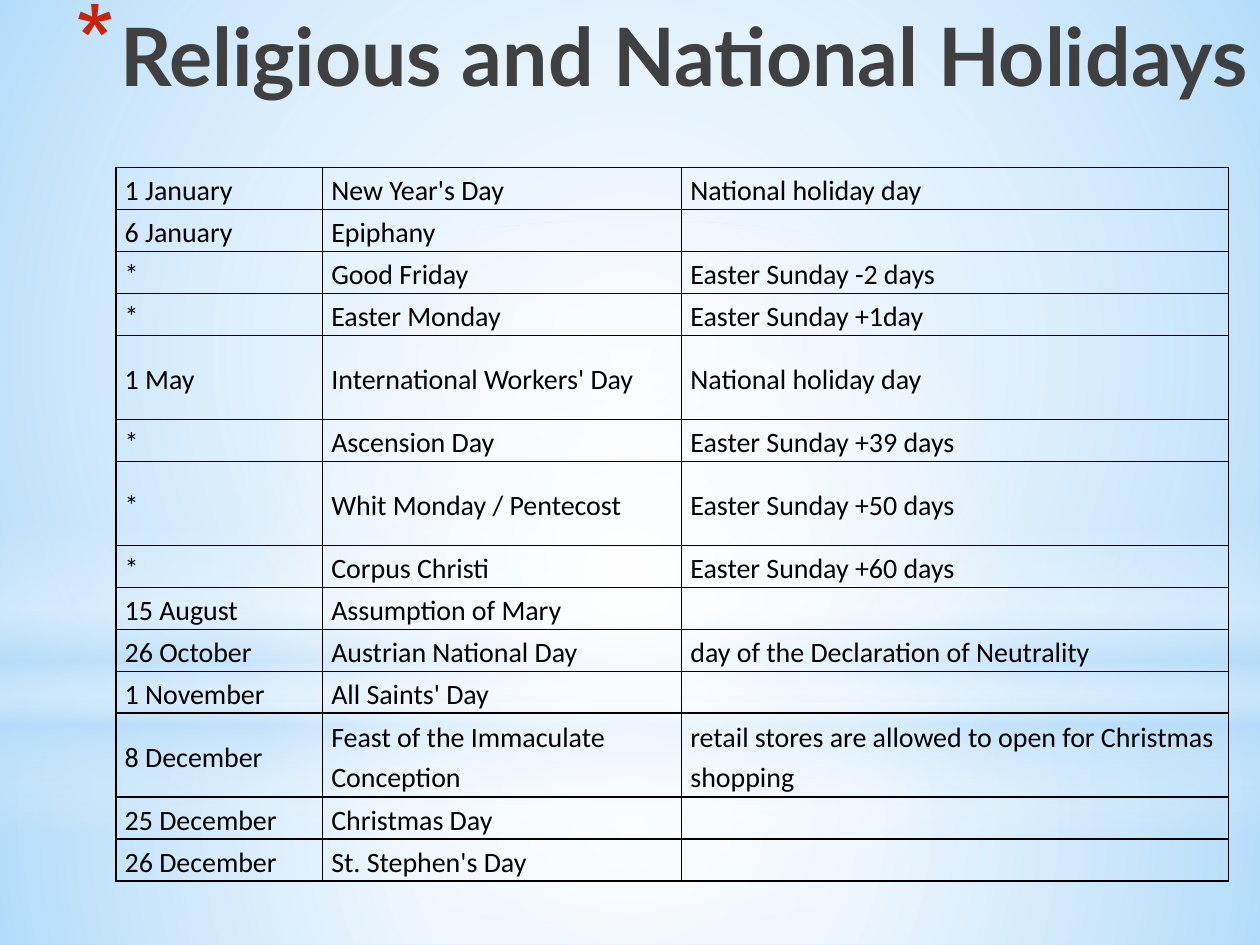
import lxml.etree
import pptx
import pptx.dml.color
import pptx.enum.shapes
import pptx.enum.text
import pptx.oxml
import pptx.oxml.ns
import pptx.util

# Content
TITLE = "Religious and National Holidays"
HOLIDAYS = [
    ("1 January", "New Year's Day", "National holiday day"),
    ("6 January", "Epiphany", ""),
    ("*", "Good Friday", "Easter Sunday -2 days"),
    ("*", "Easter Monday", "Easter Sunday +1day"),
    ("1 May", "International Workers' Day", "National holiday day"),
    ("*", "Ascension Day", "Easter Sunday +39 days"),
    ("*", "Whit Monday / Pentecost", "Easter Sunday +50 days"),
    ("*", "Corpus Christi", "Easter Sunday +60 days"),
    ("15 August", "Assumption of Mary", ""),
    ("26 October", "Austrian National Day", "day of the Declaration of Neutrality"),
    ("1 November", "All Saints' Day", ""),
    ("8 December", "Feast of the Immaculate Conception",
     "retail stores are allowed to open for Christmas shopping"),
    ("25 December", "Christmas Day", ""),
    ("26 December", "St. Stephen's Day", ""),
]
DOUBLE_ROWS = {"International Workers' Day", "Whit Monday / Pentecost",
               "Feast of the Immaculate Conception"}

THEME = {
    "sky": "B4DCFA", "white": "FFFFFF", "title": "404040", "bullet": "C3260C",
    "text": "000000", "border": "000000",
    "title_font": "Lato", "title_size": 46, "bullet_percent": 128,
    "table_font": "Calibri", "table_size": 16, "border_width": 1,
}

# Layout in inches
WIDTH, HEIGHT = 10, 7.5
HORIZON = 5.58
TABLE_LEFT, TABLE_TOP = 0.92, 1.33
COLUMNS = (1.64, 2.85, 4.34)
ROW = 1 / 3
HANGING = 0.35

# Background glows: preset, top, height, circular, stops (position, colour, opacity)
GLOWS = [
    ("RECTANGLE", HORIZON, HEIGHT - HORIZON, True,
     [(0, "white", 91), (37, "white", 76), (100, "sky", 79)]),
    ("RECTANGLE", 0, HORIZON, True,
     [(0, "white", 89), (48, "white", 62), (100, "sky", 79)]),
    ("RECTANGLE", 4.12, 2.5, False,
     [(0, "white", 0), (29, "white", 30), (45, "sky", 40),
      (55, "white", 26), (65, "sky", 60), (100, "white", 0)]),
    ("OVAL", 1.75, HORIZON, True, [(0, "white", 100), (56, "white", 0)]),
]

inches, points = pptx.util.Inches, pptx.util.Pt
qn = pptx.oxml.ns.qn
NAMESPACE = pptx.oxml.ns.nsdecls("a")


def color(name):
    return pptx.dml.color.RGBColor.from_string(THEME[name])


def style(paragraph, prefix, color_name, bold=False):
    font = paragraph.font
    font.name, font.size = THEME[prefix + "_font"], points(THEME[prefix + "_size"])
    font.bold = bold
    font.color.rgb = color(color_name)


def add_glow(slide, preset, top, height, circular, stops):
    shape = slide.shapes.add_shape(
        pptx.enum.shapes.MSO_SHAPE[preset], 0, inches(top), inches(WIDTH), inches(height))
    shape.shadow.inherit = False
    shape.line.fill.background()
    stop_xml = "".join(
        f'<a:gs pos="{position * 1000}"><a:srgbClr val="{THEME[name]}">'
        f'<a:alpha val="{opacity * 1000}"/></a:srgbClr></a:gs>'
        for position, name, opacity in stops)
    direction = ('<a:path path="circle"><a:fillToRect l="50000" t="50000" r="50000" '
                 'b="50000"/></a:path>' if circular else '<a:lin ang="5400000" scaled="0"/>')
    gradient = pptx.oxml.parse_xml(
        f'<a:gradFill {NAMESPACE} rotWithShape="1"><a:gsLst>{stop_xml}</a:gsLst>'
        f'{direction}</a:gradFill>')
    shape.element.spPr.find(qn("a:prstGeom")).addnext(gradient)


def add_title(slide):
    box = slide.shapes.add_textbox(inches(-0.08), 0, inches(WIDTH + 0.08), inches(1.5))
    box.text_frame.word_wrap = True
    paragraph = box.text_frame.paragraphs[0]
    paragraph.text = TITLE
    paragraph.alignment = pptx.enum.text.PP_ALIGN.RIGHT
    style(paragraph, "title", "title", bold=True)
    properties = paragraph._p.get_or_add_pPr()
    properties.set("marL", str(inches(HANGING)))
    properties.set("indent", str(-inches(HANGING)))
    bullet = (f'<a:buClr {NAMESPACE}><a:srgbClr val="{THEME["bullet"]}"/></a:buClr>',
              f'<a:buSzPct {NAMESPACE} val="{THEME["bullet_percent"] * 1000}"/>',
              f'<a:buChar {NAMESPACE} char="*"/>')
    for index, xml in enumerate(bullet):
        properties.insert(index, pptx.oxml.parse_xml(xml))


def format_cell(cell, text):
    cell.fill.background()
    cell.vertical_anchor = pptx.enum.text.MSO_ANCHOR.MIDDLE
    cell.margin_left = cell.margin_right = inches(0.07)
    cell.margin_top = cell.margin_bottom = 0
    paragraph = cell.text_frame.paragraphs[0]
    if text:
        paragraph.text = text
        paragraph.line_spacing = 1.15
    style(paragraph, "table", "text")
    properties = cell._tc.get_or_add_tcPr()
    for index, side in enumerate("LRTB"):
        properties.insert(index, pptx.oxml.parse_xml(
            f'<a:ln{side} {NAMESPACE} w="{points(THEME["border_width"])}"><a:solidFill>'
            f'<a:srgbClr val="{THEME["border"]}"/></a:solidFill></a:ln{side}>'))


def add_holidays(slide):
    heights = [ROW * (2 if name in DOUBLE_ROWS else 1) for _, name, _ in HOLIDAYS]
    table = slide.shapes.add_table(
        len(HOLIDAYS), len(COLUMNS), inches(TABLE_LEFT), inches(TABLE_TOP),
        inches(sum(COLUMNS)), inches(sum(heights))).table
    table.first_row = table.horz_banding = False
    for column, width in zip(table.columns, COLUMNS):
        column.width = inches(width)
    for row, height, texts in zip(table.rows, heights, HOLIDAYS):
        row.height = inches(height)
        for cell, text in zip(row.cells, texts):
            format_cell(cell, text)


def main():
    presentation = pptx.Presentation()
    presentation.slide_width, presentation.slide_height = inches(WIDTH), inches(HEIGHT)
    slide = presentation.slides.add_slide(presentation.slide_layouts[6])
    slide.background.fill.solid()
    slide.background.fill.fore_color.rgb = color("sky")
    for glow in GLOWS:
        add_glow(slide, *glow)
    add_title(slide)
    add_holidays(slide)
    presentation.save("out.pptx")


if __name__ == "__main__":
    main()
